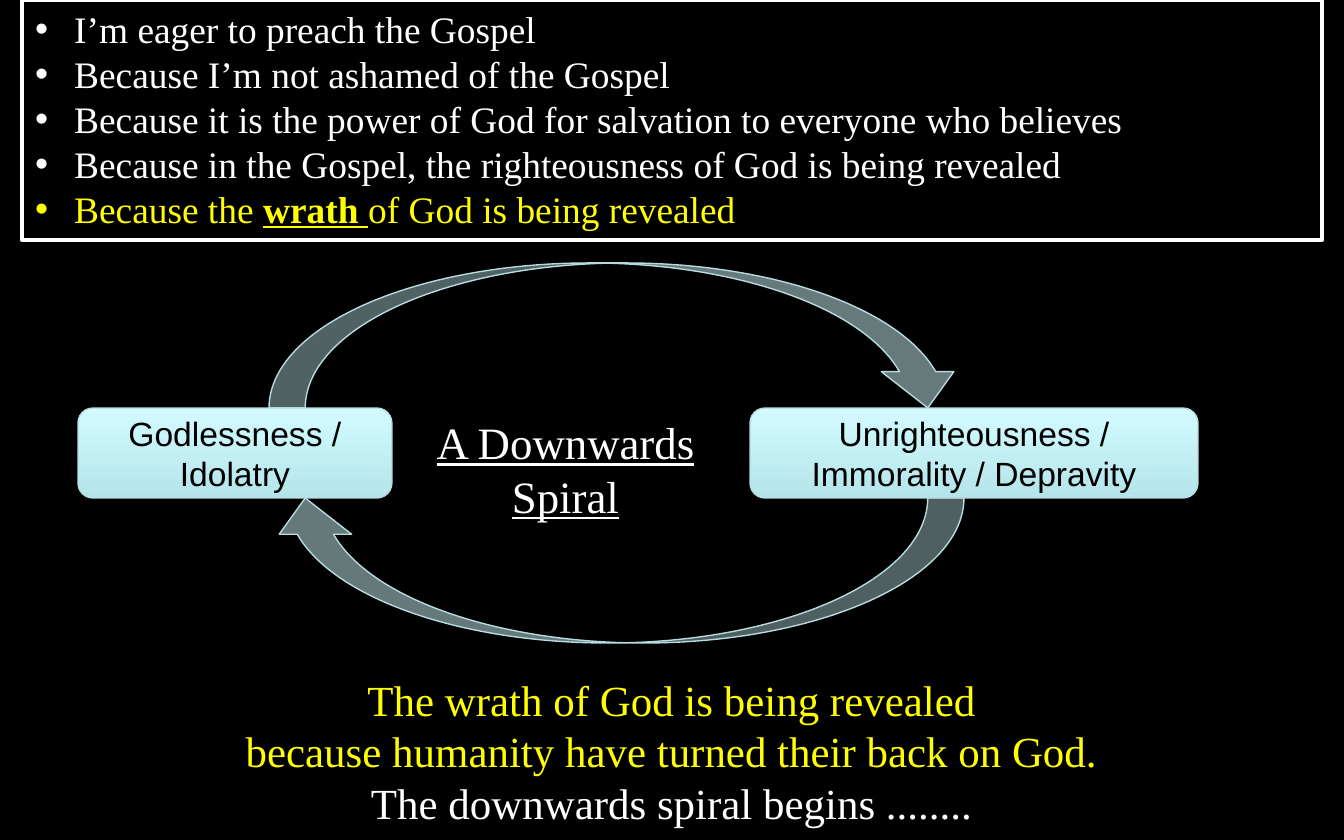
from pptx import Presentation, util as u
from pptx.dml.color import RGBColor
from pptx.enum import shapes, text
from pptx.oxml import parse_xml
from pptx.oxml.ns import nsdecls

PX = 914400 / 134.4
WIDE, HIGH = 1344, 840
WHITE, YELLOW, BLACK = "FFFFFF", "FFFF00", "000000"
EDGE, ARROW = "B6DCDF", "BBE0E3"
SERIF, SANS = "Times New Roman", "Arial"
KIND = shapes.MSO_SHAPE

# Content: a paragraph is a list of (words, colour, stressed) runs
REASONS = [[(words, WHITE, False)] for words in (
    "I’m eager to preach the Gospel",
    "Because I’m not ashamed of the Gospel",
    "Because it is the power of God for salvation to everyone who believes",
    "Because in the Gospel, the righteousness of God is being revealed",
)] + [[("Because the ", YELLOW, False), ("wrath ", YELLOW, True),
       ("of God is being revealed", YELLOW, False)]]
TITLE = [[("A Downwards Spiral", WHITE, False)]]
STAGES = [("Godlessness / Idolatry", 78, 314),
          ("Unrighteousness / Immorality / Depravity", 750, 448)]
CLOSING = [[("The wrath of God is being revealed", YELLOW, False)],
           [("because humanity have turned their back on God.", YELLOW, False)],
           [("The downwards spiral begins ........", WHITE, False)]]

# Cycle: one arrow above the row of stages, one below it
ROW_TOP, ROW_HIGH = 408, 90
ARC_LEFT, ARC_WIDE, ARC_HIGH = 269, 695, 145
ARCS = [(ROW_TOP - ARC_HIGH, 0, 55), (ROW_TOP + ROW_HIGH, 180, 54)]


def px(n):
    return u.Emu(round(n * PX))


def rgb(code):
    return RGBColor.from_string(code)


def add_box(kind, *place, edge=EDGE, weight=0.75):
    box = slide.shapes.add_shape(kind, *map(px, place))
    box.shadow.inherit = False
    box.line.color.rgb = rgb(edge)
    box.line.width = u.Pt(weight)
    return box


def put_text(box, paras, size, font=SERIF, align=text.PP_ALIGN.CENTER,
             anchor=text.MSO_ANCHOR.TOP, line=False, bullet=False):
    frame = box.text_frame
    frame.word_wrap = True
    frame.vertical_anchor = anchor
    for i, runs in enumerate(paras):
        para = frame.add_paragraph() if i else frame.paragraphs[0]
        para.alignment = align
        if bullet:
            props = para._p.get_or_add_pPr()
            props.set("marL", str(px(39)))
            props.set("indent", str(-px(39)))
            for tag in ('a:buFont %s typeface="Arial"', 'a:buChar %s char="•"'):
                props.append(parse_xml("<" + tag % nsdecls("a") + "/>"))
        for words, colour, stress in runs:
            run = para.add_run()
            run.text = words
            run.font.name = font
            run.font.size = u.Pt(size)
            run.font.color.rgb = rgb(colour)
            run.font.bold = stress
            run.font.underline = line or stress


def add_arc(top, turn, alpha):
    arc = add_box(KIND.CURVED_DOWN_ARROW, ARC_LEFT, top, ARC_WIDE, ARC_HIGH)
    arc.rotation = turn
    arc.fill.solid()
    arc.fill.fore_color.rgb = rgb(ARROW)
    tint = arc.fill._xPr.solidFill[0]
    tint.append(parse_xml(f'<a:alpha {nsdecls("a")} val="{alpha * 1000}"/>'))


show = Presentation()
show.slide_width, show.slide_height = px(WIDE), px(HIGH)
slide = show.slides.add_slide(show.slide_layouts[6])
slide.background.fill.solid()
slide.background.fill.fore_color.rgb = rgb(BLACK)

# Upper arrow
add_arc(*ARCS[0])

# Framed list of reasons
panel = add_box(KIND.RECTANGLE, 22, 0, 1300, 240, edge=WHITE, weight=2.25)
panel.fill.background()
put_text(panel, REASONS, 20, align=text.PP_ALIGN.LEFT, bullet=True)

# Title in the middle of the cycle
title = slide.shapes.add_textbox(*map(px, (392, ROW_TOP, 347, 122)))
put_text(title, TITLE, 24, line=True)

# Stages
for words, left, wide in STAGES:
    stage = add_box(KIND.FLOWCHART_ALTERNATE_PROCESS, left, ROW_TOP, wide, ROW_HIGH)
    stage.fill.gradient()
    stage.fill.gradient_angle = 90
    for stop, colour in zip(stage.fill.gradient_stops, ("B5E5E9", "D3FBFF")):
        stop.color.rgb = rgb(colour)
    put_text(stage, [[(words, BLACK, False)]], 18, font=SANS,
             anchor=text.MSO_ANCHOR.MIDDLE)

# Lower arrow
add_arc(*ARCS[1])

# Closing words
closing = slide.shapes.add_textbox(*map(px, (0, 667, WIDE, 169)))
put_text(closing, CLOSING, 23)

show.save("out.pptx")
